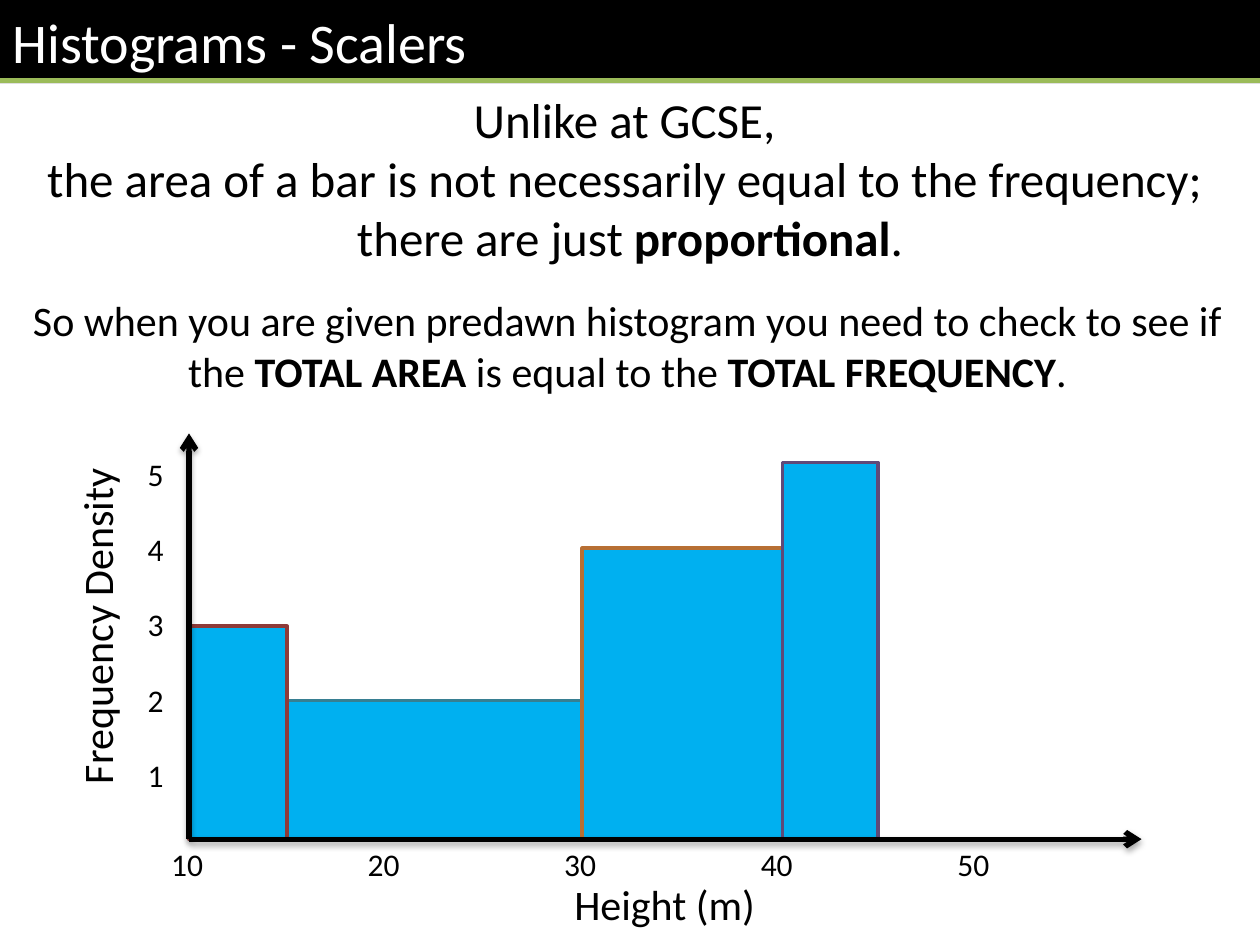
"""Build a slide on scaled histograms with a hand-drawn frequency density graph."""
from lxml import etree
from pptx import Presentation
from pptx.dml.color import RGBColor
from pptx.enum.shapes import MSO_CONNECTOR, MSO_SHAPE
from pptx.enum.text import MSO_ANCHOR, PP_ALIGN
from pptx.oxml.ns import qn
from pptx.util import Inches, Pt

LEFT, CENTER = PP_ALIGN.LEFT, PP_ALIGN.CENTER
MIDDLE = MSO_ANCHOR.MIDDLE
RECTANGLE = MSO_SHAPE.RECTANGLE
STRAIGHT = MSO_CONNECTOR.STRAIGHT

COLORS = {
    "black": "000000", "white": "FFFFFF", "green": "9BBB59", "bar": "00B0F0",
    "teal": "377F92", "red": "8E3B39", "orange": "B76F34", "purple": "5F4A78",
}
FONT = "Calibri"
TITLE = [[("Histograms - Scalers", False)]]
STATEMENT = [
    [("Unlike at GCSE, ", False)],
    [("the area of a bar is not necessarily equal to the frequency; ", False)],
    [("there are just ", False), ("proportional", True), (".", False)],
]
ADVICE = [[
    ("So when you are given predawn histogram you need to check to see if the ", False),
    ("TOTAL AREA ", True), ("is equal to the ", False),
    ("TOTAL FREQUENCY", True), (".", False),
]]
HEIGHT_TICKS = ["10", "20", "30", "40", "50"]
DENSITY_TICKS = ["5", "4", "3", "2", "1"]
BARS = [
    (2.28, 4.62, 5.56, "teal"),
    (1.5, 2.28, 4.97, "red"),
    (4.62, 6.21, 4.35, "orange"),
    (6.21, 6.97, 3.67, "purple"),
]
ORIGIN = (1.5, 6.66)
AXIS_ENDS = [(1.5, 3.44), (9.06, 6.66)]
TICK_STEP = 1.56


def color(name):
    return RGBColor.from_string(COLORS[name])


def write(shape, paragraphs, size, align=CENTER, ink="black", gap=0):
    frame = shape.text_frame
    frame.word_wrap = True
    for index, runs in enumerate(paragraphs):
        paragraph = frame.paragraphs[0] if index == 0 else frame.add_paragraph()
        paragraph.alignment = align
        paragraph.space_before = Pt(gap if index else 0)
        for text, bold in runs:
            run = paragraph.add_run()
            run.text = text
            run.font.color.rgb = color(ink)
            font_format = {"name": FONT, "size": Pt(size), "bold": bold}
            for attribute, value in font_format.items():
                setattr(run.font, attribute, value)


def add_text(slide, box, paragraphs, size, **options):
    shape = slide.shapes.add_textbox(*map(Inches, box))
    write(shape, paragraphs, size, **options)
    return shape


def add_rectangle(shapes, box, fill, line=None):
    shape = shapes.add_shape(RECTANGLE, *map(Inches, box))
    shape.shadow.inherit = False
    shape.fill.solid()
    shape.fill.fore_color.rgb = color(fill)
    if line:
        shape.line.color.rgb = color(line)
        shape.line.width = Pt(2)
    else:
        shape.line.fill.background()
    return shape


def add_line(shapes, start, end, ink):
    connector = shapes.add_connector(STRAIGHT, *map(Inches, start + end))
    connector.line.color.rgb = color(ink)
    connector.line.width = Pt(3)
    effects = etree.SubElement(connector._element.spPr, qn("a:effectLst"))
    return connector, effects


def add_axis(slide, end):
    connector, effects = add_line(slide.shapes, ORIGIN, end, "black")
    etree.SubElement(connector.line._get_or_add_ln(), qn("a:tailEnd"), type="arrow")
    shadow = etree.SubElement(
        effects, qn("a:outerShdw"), blurRad=str(Pt(3.1)), dist=str(Pt(1.8)),
        dir="5400000", rotWithShape="0")
    ink = etree.SubElement(shadow, qn("a:srgbClr"), val=COLORS["black"])
    etree.SubElement(ink, qn("a:alpha"), val="35000")


def add_graph(slide):
    for left, right, top, outline in BARS:
        box = (left, top, right - left, ORIGIN[1] - top)
        add_rectangle(slide.shapes, box, "bar", outline)

    ticks = add_text(slide, (1.26, 6.66, 8.27, 0.4),
                     [[("\t".join(HEIGHT_TICKS), False)]], 18, align=LEFT)
    properties = ticks.text_frame.paragraphs[0]._p.get_or_add_pPr()
    stops = etree.SubElement(properties, qn("a:tabLst"))
    for number in range(1, len(HEIGHT_TICKS)):
        etree.SubElement(stops, qn("a:tab"), pos=str(Inches(number * TICK_STEP)), algn="l")

    add_text(slide, (0.96, 3.56, 0.55, 2.83),
             [[(tick, False)] for tick in DENSITY_TICKS], 18, gap=21.5)
    add_text(slide, (4.37, 6.92, 1.81, 0.5), [[("Height (m)", False)]], 24)
    label = add_text(slide, (-0.75, 4.72, 3.03, 0.5), [[("Frequency Density", False)]], 24)
    label.rotation = 270
    for end in AXIS_ENDS:
        add_axis(slide, end)


def add_title(slide):
    group = slide.shapes.add_group_shape()
    banner = add_rectangle(group.shapes, (0, 0, 10, 0.66), "black")
    banner.text_frame.vertical_anchor = MIDDLE
    write(banner, TITLE, 32, align=LEFT, ink="white")
    add_line(group.shapes, (0, 0.64), (10, 0.64), "green")


def main():
    presentation = Presentation()
    presentation.slide_width, presentation.slide_height = Inches(10), Inches(7.5)
    slide = presentation.slides.add_slide(presentation.slide_layouts[6])
    add_graph(slide)
    add_title(slide)
    add_text(slide, (0, 0.66, 10, 1.51), STATEMENT, 28)
    add_text(slide, (0, 2.29, 9.96, 0.91), ADVICE, 24)
    presentation.save("out.pptx")


if __name__ == "__main__":
    main()
